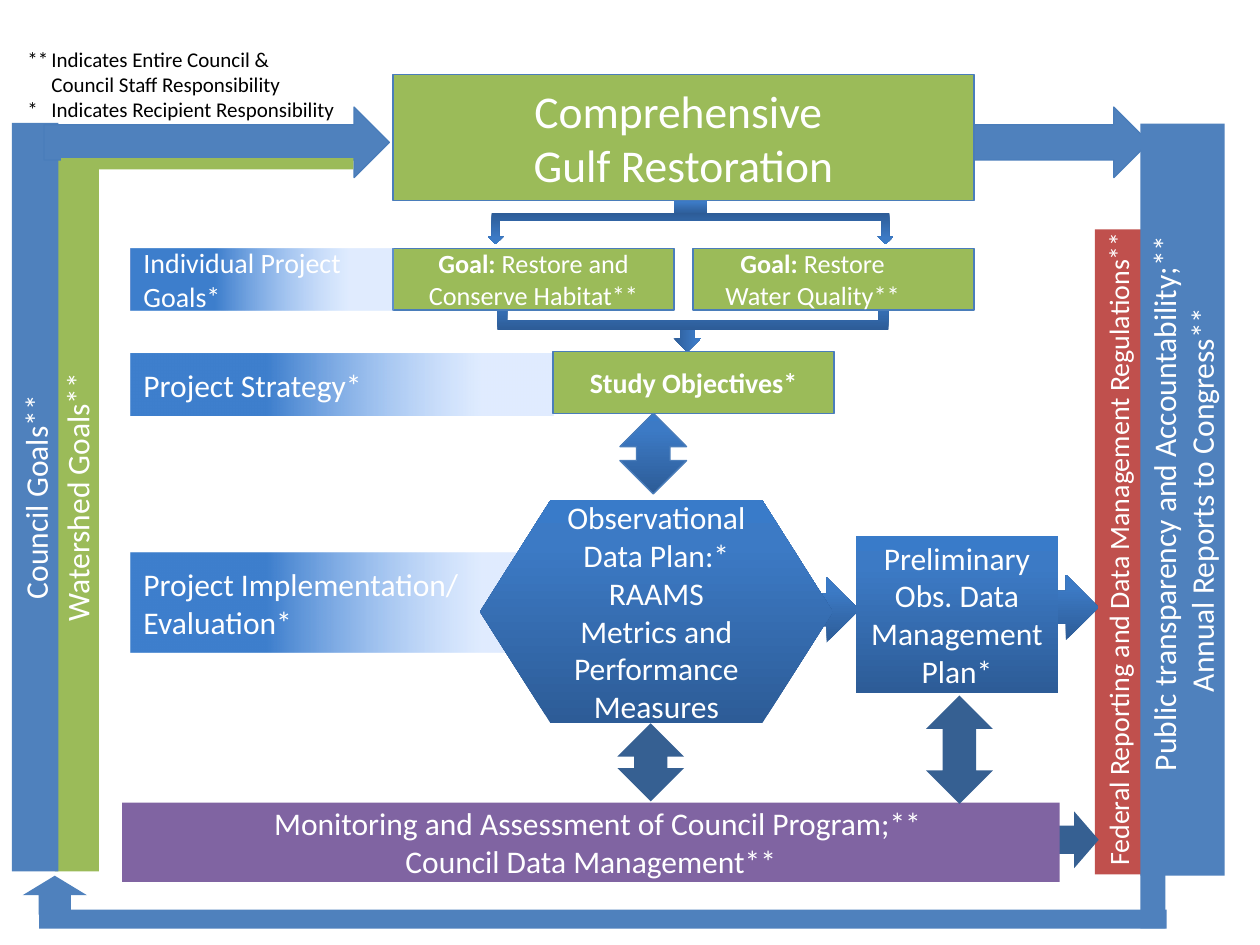
"""Build the Gulf restoration monitoring framework slide."""
from dataclasses import dataclass
from typing import Optional, Tuple, Union

from lxml import etree
from pptx import Presentation
from pptx.dml.color import RGBColor
from pptx.enum import shapes, text
from pptx.oxml.ns import qn
from pptx.util import Inches, Pt

KIND = shapes.MSO_SHAPE
RECT, RIGHT, UP = KIND.RECTANGLE, KIND.RIGHT_ARROW, KIND.UP_ARROW
BENT, BOTH = KIND.BENT_UP_ARROW, KIND.UP_DOWN_ARROW
LEFT, MID = text.PP_ALIGN.LEFT, text.PP_ALIGN.CENTER

WHITE = RGBColor(0xFF, 0xFF, 0xFF)
BLACK = RGBColor(0, 0, 0)
BLUE = RGBColor(0x4F, 0x81, 0xBD)
EDGE = RGBColor(0x4A, 0x7D, 0xBA)
NAVY = RGBColor(0x36, 0x60, 0x92)
GREEN = RGBColor(0x9B, 0xBB, 0x59)
RED = RGBColor(0xC0, 0x50, 0x4D)
PURPLE = RGBColor(0x80, 0x64, 0xA2)
DEEP = RGBColor(0x2D, 0x5C, 0x97)
STEEL = RGBColor(0x3C, 0x7A, 0xC5)
BRIGHT = RGBColor(0x39, 0x7B, 0xC9)
ROYAL = RGBColor(0x3E, 0x7F, 0xCD)
PALE = RGBColor(0x96, 0xC0, 0xFF)


@dataclass(frozen=True)
class Grad:
    """Stops of position, colour and opacity in percent, with an angle."""
    stops: Tuple[Tuple[int, RGBColor, int], ...]
    angle: int


SHADE = Grad(((0, DEEP, 100), (80, STEEL, 100), (100, BRIGHT, 100)), 90)
FADE = Grad(((0, ROYAL, 100), (32, ROYAL, 100), (83, PALE, 29), (100, PALE, 29)), 0)


@dataclass(frozen=True)
class Para:
    """A paragraph with an optional bold lead and margins in inches."""
    body: str
    lead: str = ""
    left: float = 0
    right: float = 0
    hang: float = 0


@dataclass(frozen=True)
class Box:
    """A shape or, without a kind, a text box."""
    kind: Optional[KIND]
    at: Tuple[float, float, float, float]
    fill: Union[RGBColor, Grad, None]
    paras: Tuple[Para, ...] = ()
    size: int = 18
    align: text.PP_ALIGN = MID
    line: bool = False
    turn: int = 0
    flip: bool = False
    ink: RGBColor = WHITE
    top: bool = False


def stage(y: float, wide: float, high: float, *lines: str, size: int = 18) -> Box:
    """Describe a fading label of a project stage."""
    return Box(RECT, (1.04, y, wide, high), FADE, tuple(map(Para, lines)), size, LEFT)


def goal(x: float, y: float, size: int, *paras: Para) -> Box:
    """Describe an outlined green box."""
    return Box(RECT, (x, y, 2.23, 0.49), GREEN, paras, size, line=True)


BOXES = (
    Box(RIGHT, (7.48, 0.85, 1.64, 0.56), BLUE, line=True),
    Box(RIGHT, (5.33, 2.56, 0.25, 0.22), SHADE, turn=90),
    Box(RIGHT, (5.57, 4.58, 1.25, 0.52), SHADE),
    Box(RECT, (0.45, 1.26, 0.13, 0.69), GREEN),
    Box(RECT, (9.05, 6.91, 0.2, 0.46), BLUE),
    Box(BENT, (3.91, 2.31, 1.7, 0.31), SHADE, flip=True),
    stage(4.39, 3.35, 0.79, "Project Implementation/", "Evaluation*"),
    Box(BENT, (5.57, 2.31, 1.52, 0.31), SHADE),
    Box(RECT, (5.35, 1.58, 0.26, 0.12), SHADE),
    Box(KIND.FLOWCHART_PROCESS, (3.12, 0.59, 4.61, 1), GREEN,
        (Para("Comprehensive "), Para("Gulf Restoration")), 26, line=True),
    Box(BENT, (3.87, 1.69, 1.7, 0.25), SHADE, turn=180),
    Box(BENT, (5.57, 1.69, 1.52, 0.25), SHADE, turn=180, flip=True),
    goal(3.12, 1.97, 15, Para("Restore and Conserve Habitat**", "Goal: ")),
    goal(5.5, 1.97, 15, Para("Restore", "Goal: ", right=0.33), Para("Water Quality**")),
    stage(1.97, 2.08, 0.49, "Individual Project Goals*", size=16),
    stage(2.81, 3.35, 0.49, "Project Strategy*"),
    goal(4.39, 2.79, 16, Para("", "Study Objectives*")),
    Box(RECT, (8.69, 1.82, 0.37, 5.12), RED),
    Box(None, (6.1, 4.01, 5.55, 0.37), None,
        (Para("Federal Reporting and Data Management Regulations**"),),
        16, LEFT, turn=270, top=True),
    Box(KIND.FLOWCHART_PREPARATION, (3.81, 3.97, 2.8, 1.77), SHADE,
        (Para("Observational Data Plan:* RAAMS Metrics and Performance Measures"),)),
    Box(RIGHT, (7.33, 4.56, 1.39, 0.52), SHADE),
    Box(RECT, (-2.19, 3.94, 5.6, 0.35), GREEN,
        (Para("Watershed Goals**", left=0.34),), turn=270),
    Box(BOTH, (4.92, 3.28, 0.53, 0.64), SHADE, line=True),
    Box(RECT, (-2.69, 3.76, 5.94, 0.37), BLUE, (Para("Council Goals**"),), turn=270),
    Box(RECT, (6.4, 3.63, 5.97, 0.67), BLUE,
        (Para("Public transparency and Accountability;** "),
         Para("Annual Reports to Congress**")), turn=270),
    Box(UP, (0.18, 6.95, 0.51, 0.31), BLUE),
    Box(RECT, (0.31, 7.22, 8.95, 0.15), BLUE),
    Box(RIGHT, (0.35, 0.85, 2.74, 0.56), BLUE, line=True),
    Box(RECT, (6.79, 4.25, 1.61, 1.25), SHADE,
        (Para("Preliminary Obs. Data Management Plan*"),)),
    Box(RECT, (1.6, 0.14, 0.09, 2.32), GREEN, turn=90),
    Box(BOTH, (4.9, 5.74, 0.53, 0.62), NAVY),
    Box(UP, (8.3, 6.47, 0.45, 0.39), NAVY, turn=90),
    Box(None, (0.12, 0.42, 6.37, 0.49), None,
        (Para("**\tIndicates Entire Council &", left=0.19, hang=0.19),
         Para("Council Staff Responsibility", left=0.19),
         Para("*\tIndicates Recipient Responsibility", left=0.19, hang=0.19)),
        12, LEFT, ink=BLACK),
    Box(RECT, (0.97, 6.37, 7.44, 0.63), PURPLE,
        (Para("Monitoring and Assessment of Council Program;**", left=0.11),
         Para("Council Data Management**"))),
    Box(BOTH, (7.35, 5.52, 0.53, 0.86), NAVY),
)


def paint(shape, fill: Union[RGBColor, Grad]) -> None:
    """Fill a shape with one colour or a gradient."""
    if isinstance(fill, RGBColor):
        shape.fill.solid()
        shape.fill.fore_color.rgb = fill
        return
    shape.fill.gradient()
    shape.fill.gradient_angle = fill.angle
    stops = shape.element.spPr.find(qn("a:gradFill")).find(qn("a:gsLst"))
    for old in list(stops):
        stops.remove(old)
    for place, tint, solid in fill.stops:
        stop = etree.SubElement(stops, qn("a:gs"), pos=str(place * 1000))
        color = etree.SubElement(stop, qn("a:srgbClr"), val=str(tint))
        if solid < 100:
            etree.SubElement(color, qn("a:alpha"), val=str(solid * 1000))


def write(frame, box: Box) -> None:
    """Set the paragraphs of a box run by run."""
    frame.word_wrap = True
    frame.vertical_anchor = text.MSO_ANCHOR.TOP if box.top else text.MSO_ANCHOR.MIDDLE
    for i, item in enumerate(box.paras):
        para = frame.add_paragraph() if i else frame.paragraphs[0]
        para.alignment = box.align
        props = para._p.get_or_add_pPr()
        for key, gap in (("marL", item.left), ("marR", item.right), ("indent", -item.hang)):
            if gap:
                props.set(key, str(Inches(gap)))
        for words, bold in ((item.lead, True), (item.body, False)):
            if words:
                run = para.add_run()
                run.text = words
                run.font.name = "Calibri"
                run.font.size = Pt(box.size)
                run.font.bold = bold
                run.font.color.rgb = box.ink


def draw(slide, box: Box) -> None:
    """Add one box to the slide."""
    place = [Inches(n) for n in box.at]
    if box.kind is None:
        shape = slide.shapes.add_textbox(*place)
    else:
        shape = slide.shapes.add_shape(box.kind, *place)
        shape.shadow.inherit = False
        paint(shape, box.fill)
        if box.line:
            shape.line.color.rgb = EDGE
            shape.line.width = Pt(0.75)
        else:
            shape.line.fill.background()
    shape.rotation = box.turn
    if box.flip:
        shape.element.spPr.find(qn("a:xfrm")).set("flipH", "1")
    if box.paras:
        write(shape.text_frame, box)


def main() -> None:
    """Draw every box and save the deck."""
    deck = Presentation()
    deck.slide_width, deck.slide_height = Inches(10), Inches(7.5)
    slide = deck.slides.add_slide(deck.slide_layouts[6])
    for box in BOXES:
        draw(slide, box)
    deck.save("out.pptx")


if __name__ == "__main__":
    main()
